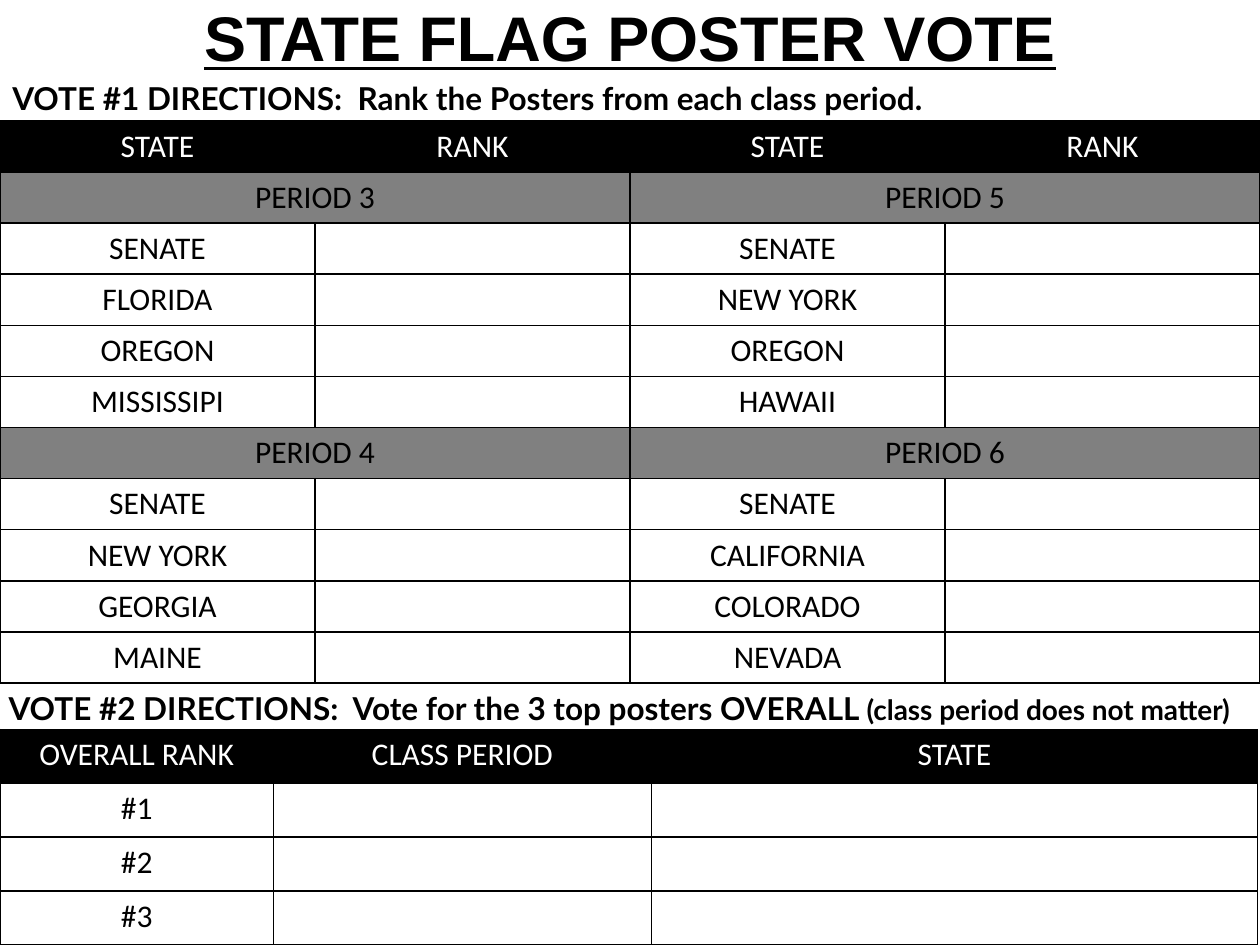
from lxml.etree import SubElement
from pptx import Presentation
from pptx.dml.color import RGBColor
from pptx.enum.text import MSO_ANCHOR, PP_ALIGN
from pptx.oxml.ns import qn
from pptx.util import Inches, Pt

BLACK, WHITE, GRAY = "000000", "FFFFFF", "808080"


def write(par, text, size, font, color=BLACK, bold=False):
    run = par.add_run()
    run.text = text
    run.font.size = Pt(size)
    run.font.name = font
    run.font.bold = bold
    run.font.color.rgb = RGBColor.from_string(color)
    return run


def grid(left, top, cols, high, rows):
    """Add a black-ruled table; a row whose first text starts with PERIOD is a band."""
    table = slide.shapes.add_table(
        len(rows), len(cols), Inches(left), Inches(top),
        Inches(sum(cols)), Inches(high)).table
    for col, wide in zip(table.columns, cols):
        col.width = Inches(wide)
    for r, row in enumerate(rows):
        table.rows[r].height = Inches(high / len(rows))
        band = row[0].startswith("PERIOD")
        for c, text in enumerate(row):
            cell = table.cell(r, c)
            # Borders come before the fill in the cell's XML
            props = cell._tc.get_or_add_tcPr()
            for side in ("a:lnL", "a:lnR", "a:lnT", "a:lnB"):
                line = SubElement(props, qn(side), w=str(Pt(1)))
                paint = SubElement(line, qn("a:solidFill"))
                SubElement(paint, qn("a:srgbClr"), val=BLACK)
            if r == 0 or band:
                cell.fill.solid()
                cell.fill.fore_color.rgb = RGBColor.from_string(GRAY if band else BLACK)
            else:
                cell.fill.background()
            if text:
                par = cell.text_frame.paragraphs[0]
                par.alignment = PP_ALIGN.CENTER
                write(par, text, 18, "Calibri", BLACK if r else WHITE)
        if band:
            for c in range(0, len(cols), 2):
                table.cell(r, c).merge(table.cell(r, c + 1))


deck = Presentation()
deck.slide_width, deck.slide_height = Inches(10), Inches(7.5)
slide = deck.slides.add_slide(deck.slide_layouts[5])

# Title
title = slide.shapes.title
title.left, title.top = 0, 0
title.width, title.height = deck.slide_width, Inches(0.58)
title.text_frame.vertical_anchor = MSO_ANCHOR.MIDDLE
par = title.text_frame.paragraphs[0]
par.alignment = PP_ALIGN.CENTER
write(par, "STATE FLAG POSTER VOTE", 36, "Arial", bold=True).font.underline = True

# First vote: left and right halves, each with two class periods
left = ["PERIOD 3", "SENATE", "FLORIDA", "OREGON", "MISSISSIPI",
        "PERIOD 4", "SENATE", "NEW YORK", "GEORGIA", "MAINE"]
right = ["PERIOD 5", "SENATE", "NEW YORK", "OREGON", "HAWAII",
         "PERIOD 6", "SENATE", "CALIFORNIA", "COLORADO", "NEVADA"]
votes = [["STATE", "RANK"] * 2] + [[a, "", b, ""] for a, b in zip(left, right)]
grid(0, 0.96, [2.5] * 4, 4.46, votes)

# Directions above each table
notes = [
    (0, 0.58, [("VOTE #1 DIRECTIONS:  Rank the Posters from each class period.", 18)]),
    (-0.03, 5.42, [("VOTE #2 DIRECTIONS:  Vote for the 3 top posters OVERALL", 18),
                   (" (class period does not matter)", 16)]),
]
for x, y, runs in notes:
    box = slide.shapes.add_textbox(Inches(x), Inches(y), deck.slide_width, Inches(0.4))
    box.text_frame.word_wrap = True
    for text, size in runs:
        write(box.text_frame.paragraphs[0], text, size, "Lato", bold=True)

# Second vote: top three overall
ranks = [["OVERALL RANK", "CLASS PERIOD", "STATE"]]
ranks += [[f"#{n}", "", ""] for n in range(1, 4)]
grid(0, 5.79, [2.17, 3, 4.81], 1.71, ranks)

deck.save("out.pptx")
